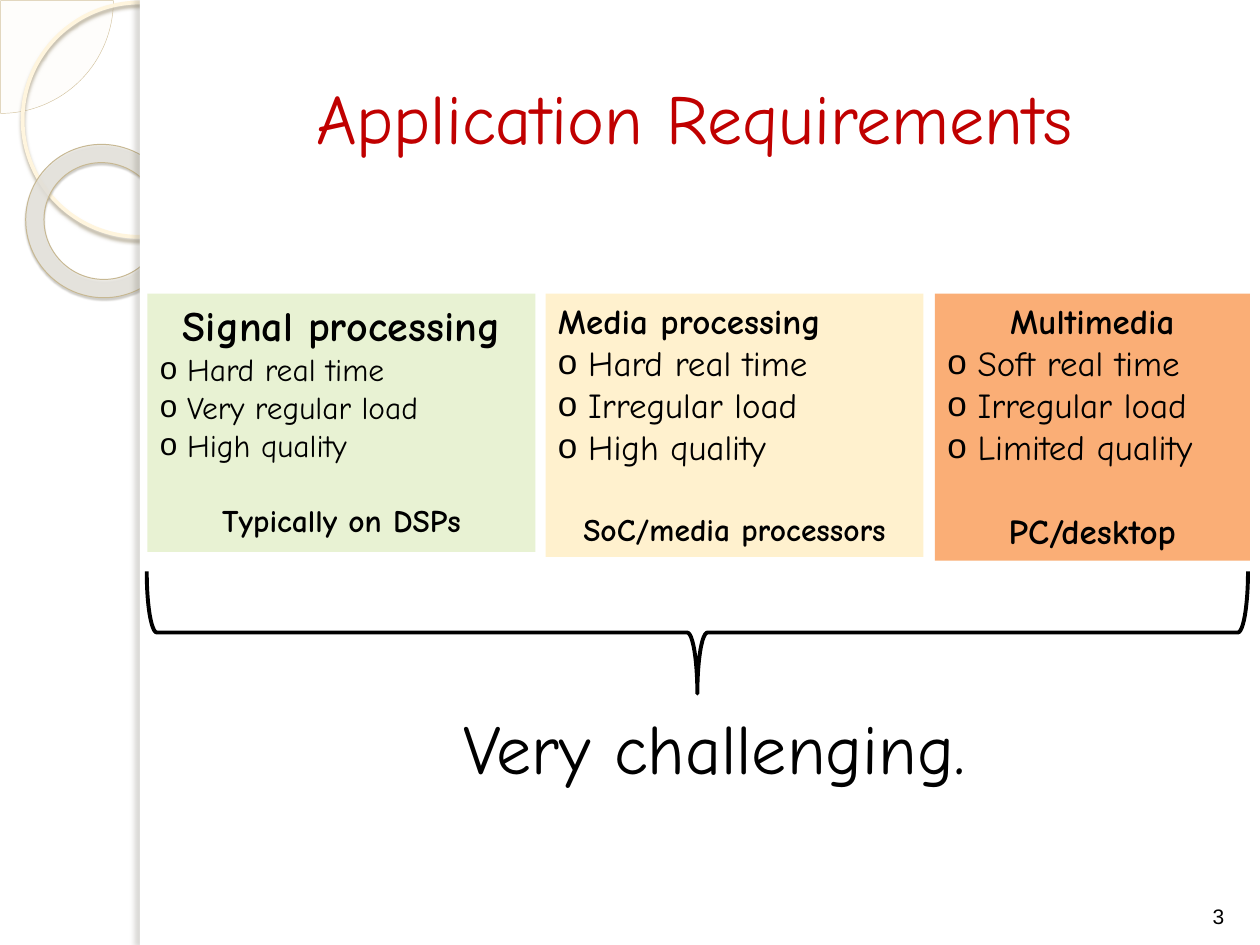
"""Builds the Application Requirements slide with three workload cards."""
from lxml.etree import SubElement
from pptx import Presentation
from pptx.dml.color import RGBColor
from pptx.enum.shapes import MSO_SHAPE as SHAPE
from pptx.enum.text import MSO_ANCHOR as ANCHOR, PP_ALIGN as ALIGN
from pptx.oxml.ns import qn
from pptx.util import Inches, Pt

COLORS = {
    "white": "FFFFFF", "black": "000000", "title": "C00000",
    "green": "E8F2D3", "cream": "FFF1CE", "orange": "FAAE76",
    "pie": "FEFAF4", "pie_line": "D3C39F", "ring": "FFF5DE",
    "donut": "E9E7E1", "donut_line": "C7B893",
    "ring_shadow": "B0A68F", "donut_shadow": "5A5444", "edge_shadow": "736F63",
}
FONT = "Comic Neue"
CARD_TOP = 2.33
CARDS = [
    dict(left=1.17, width=3.08, height=2.05, color="green",
         heading="Signal processing", heading_size=24, body_size=18,
         bullets=["Hard real time", "Very regular load", "High quality"],
         platform="Typically on DSPs", platform_size=18),
    dict(left=4.33, width=3, height=2.09, color="cream",
         heading="Media processing", heading_align=ALIGN.LEFT,
         bullets=["Hard real time", "Irregular load", "High quality"],
         platform="SoC/media processors", platform_size=18),
    dict(left=7.42, width=2.5, height=2.12, color="orange",
         heading="Multimedia",
         bullets=["Soft real time", "Irregular load", "Limited quality"],
         platform="PC/desktop"),
]


def rgb(name):
    """Return the named colour."""
    return RGBColor.from_string(COLORS[name])


def set_alpha(parent, percent):
    """Set the opacity of the colour element inside parent."""
    color = parent.find(".//" + qn("a:srgbClr"))
    SubElement(color, qn("a:alpha"), val=str(percent * 1000))


def add_shadow(shape, color, alpha, blur, distance, angle):
    """Give the shape an outer shadow; lengths in points, angle in degrees."""
    effects = shape._element.spPr.find(qn("a:effectLst"))
    shadow = SubElement(effects, qn("a:outerShdw"), blurRad=str(Pt(blur)),
                        dist=str(Pt(distance)), dir=str(angle * 60000),
                        algn="tl", rotWithShape="0")
    SubElement(shadow, qn("a:srgbClr"), val=COLORS[color])
    set_alpha(shadow, alpha)


def add_shape(slide, kind, box, fill=None, alpha=None, line=None, weight=1,
              rotation=0, adjustments=(), shadow=None):
    """Add a preset shape with the given fill, outline and shadow."""
    shape = slide.shapes.add_shape(kind, *map(Inches, box))
    shape.shadow.inherit = False
    shape.rotation = rotation
    for index, value in enumerate(adjustments):
        shape.adjustments[index] = value
    if fill:
        shape.fill.solid()
        shape.fill.fore_color.rgb = rgb(fill)
        if alpha:
            set_alpha(shape._element.spPr.find(qn("a:solidFill")), alpha)
    else:
        shape.fill.background()
    if line:
        shape.line.color.rgb = rgb(line)
        shape.line.width = Pt(weight)
    else:
        shape.line.fill.background()
    if shadow:
        add_shadow(shape, *shadow)
    return shape


def add_bullet(paragraph, indent):
    """Give the paragraph an o bullet with a hanging indent."""
    properties = paragraph._p.get_or_add_pPr()
    properties.set("marL", str(Inches(indent)))
    properties.set("indent", str(-Inches(indent)))
    SubElement(properties, qn("a:buFont"), typeface="Arial")
    SubElement(properties, qn("a:buChar"), char="o")


def write(frame, text, size=20, color="black", bold=False, font=FONT,
          align=ALIGN.LEFT, space_before=0, bullet=False):
    """Write one paragraph, filling the first one if it is still empty."""
    first = frame.paragraphs[0]
    paragraph = frame.add_paragraph() if first.runs else first
    paragraph.alignment = align
    paragraph.space_before = Pt(space_before)
    if bullet:
        add_bullet(paragraph, 0.012 * size)
    run = paragraph.add_run()
    run.text = text
    run.font.name = font
    run.font.size = Pt(size)
    run.font.bold = bold
    run.font.color.rgb = rgb(color)


def add_text(slide, box, text, anchor=ANCHOR.TOP, **style):
    """Add a wrapping text box with one paragraph."""
    frame = slide.shapes.add_textbox(*map(Inches, box)).text_frame
    frame.word_wrap = True
    frame.vertical_anchor = anchor
    write(frame, text, **style)


def add_side_ornament(slide):
    """Draw the rings and the white page panel that covers their right side."""
    add_shape(slide, SHAPE.PIE, (-0.89, -0.89, 1.79, 1.79), fill="pie", alpha=33,
              line="pie_line", weight=0.25, adjustments=(0, 54))
    add_shape(slide, SHAPE.OVAL, (0.18, 0.02, 1.86, 1.86), line="ring",
              weight=2.15, shadow=("ring_shadow", 85, 2, 2, 90))
    add_shape(slide, SHAPE.DONUT, (0.2, 1.15, 1.23, 1.21), fill="donut", alpha=80,
              line="donut_line", weight=0.58, rotation=38.6, adjustments=(0.12,),
              shadow=("donut_shadow", 35, 1, 1.2, 75))
    add_shape(slide, SHAPE.RECTANGLE, (1.11, 0, 8.89, 7.5), fill="white")
    add_shape(slide, SHAPE.RECTANGLE, (1.11, 0, 0.08, 7.5), fill="white",
              shadow=("edge_shadow", 25, 3, 3, 180))


def add_card(slide, left, width, height, color, heading, bullets, platform,
             heading_size=20, heading_align=ALIGN.CENTER, body_size=20,
             platform_size=20):
    """Add a coloured card with a heading, bullets and a platform line."""
    card = add_shape(slide, SHAPE.RECTANGLE, (left, CARD_TOP, width, height),
                     fill=color)
    frame = card.text_frame
    frame.word_wrap = True
    frame.vertical_anchor = ANCHOR.TOP
    write(frame, heading, size=heading_size, bold=True, align=heading_align)
    for text in bullets:
        write(frame, text, size=body_size, bullet=True)
    write(frame, platform, size=platform_size, bold=True, align=ALIGN.CENTER,
          space_before=1.2 * body_size)


def main():
    """Build and save the slide."""
    presentation = Presentation()
    presentation.slide_width = Inches(10)
    presentation.slide_height = Inches(7.5)
    slide = presentation.slides.add_slide(presentation.slide_layouts[6])
    add_side_ornament(slide)
    add_text(slide, (1.25, 0.3, 8.52, 1.25), "Application Requirements",
             anchor=ANCHOR.MIDDLE, size=40, color="title", align=ALIGN.CENTER)
    for card in CARDS:
        add_card(slide, **card)
    add_shape(slide, SHAPE.LEFT_BRACE, (5.05, 0.65, 0.97, 8.74), line="black",
              weight=2.25, rotation=270)
    add_text(slide, (3.58, 5.54, 5.29, 0.77), "Very challenging.", size=40)
    add_text(slide, (9.42, 6.9, 0.5, 0.52), "3", anchor=ANCHOR.BOTTOM, size=12,
             font="Arial", align=ALIGN.CENTER)
    presentation.save("out.pptx")


if __name__ == "__main__":
    main()
